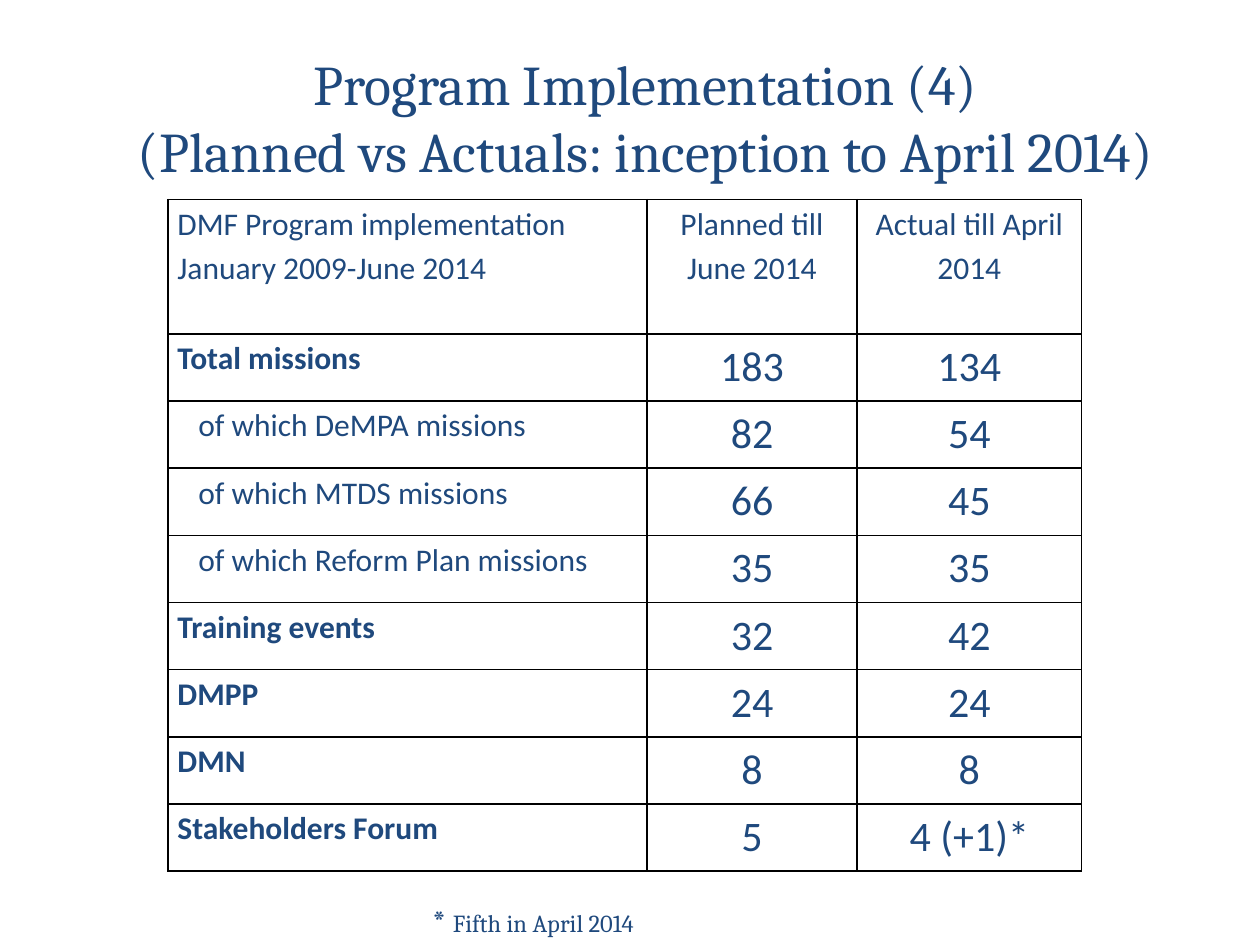
from lxml import etree
from pptx import Presentation
from pptx.dml.color import RGBColor
from pptx.enum.text import MSO_ANCHOR, PP_ALIGN
from pptx.oxml.ns import qn
from pptx.util import Pt

CENTER, LEFT = PP_ALIGN.CENTER, PP_ALIGN.LEFT
MIDDLE, TOP = MSO_ANCHOR.MIDDLE, MSO_ANCHOR.TOP

TITLE = "Program Implementation (4)\v(Planned vs Actuals: inception to April 2014)"
HEADER = ("DMF Program implementation January 2009-June 2014",
          "Planned till June 2014", "Actual till April 2014")
# label, planned, actual, is a sub-item of the row above
ROWS = [
    ("Total missions", "183", "134", False),
    ("of which DeMPA missions", "82", "54", True),
    ("of which MTDS missions", "66", "45", True),
    ("of which Reform Plan missions", "35", "35", True),
    ("Training events", "32", "42", False),
    ("DMPP", "24", "24", False),
    ("DMN", "8", "8", False),
    ("Stakeholders Forum", "5", "4 (+1)*", False),
]
FOOTNOTE_MARK, FOOTNOTE = "* ", "Fifth in April 2014"

THEME = {
    "ink": RGBColor(0x1F, 0x49, 0x7D), "border": "000000",
    "heading_font": "Cambria", "body_font": "Calibri",
    "title": 32, "figure": 24, "label": 18, "note": 14,
}
COLUMN_WIDTHS = (273.6, 120.24, 128.16)
HEADER_HEIGHT, ROW_HEIGHT = 76.8, 38.4
CELL_INSET, SUB_INDENT = 5.4, 12


def set_font(font, name, size, bold=False):
    font.name, font.size, font.bold = name, Pt(size), bold
    font.color.rgb = THEME["ink"]


def add_text_box(page, left, top, width, height, anchor):
    box = page.shapes.add_textbox(Pt(left), Pt(top), Pt(width), Pt(height))
    box.text_frame.word_wrap = True
    box.text_frame.vertical_anchor = anchor
    return box.text_frame.paragraphs[0]


def add_borders(cell):
    properties = cell._tc.get_or_add_tcPr()
    for position, side in enumerate(("a:lnL", "a:lnR", "a:lnT", "a:lnB")):
        line = etree.Element(qn(side), w=str(Pt(1)))
        fill = etree.SubElement(line, qn("a:solidFill"))
        etree.SubElement(fill, qn("a:srgbClr"), val=THEME["border"])
        properties.insert(position, line)


def fill_cell(cell, text, size, align, bold=False, indent=0):
    cell.margin_left, cell.margin_right = Pt(CELL_INSET + indent), Pt(CELL_INSET)
    cell.margin_top = cell.margin_bottom = Pt(0)
    cell.fill.background()
    para = cell.text_frame.paragraphs[0]
    para.text = text
    para.alignment = align
    para.line_spacing = 1.15
    set_font(para.font, THEME["body_font"], size, bold)
    add_borders(cell)


def add_program_table(page):
    height = HEADER_HEIGHT + ROW_HEIGHT * len(ROWS)
    table = page.shapes.add_table(
        len(ROWS) + 1, len(HEADER), Pt(96), Pt(114),
        Pt(sum(COLUMN_WIDTHS)), Pt(height)).table
    table.first_row = table.horz_banding = False
    for column, width in zip(table.columns, COLUMN_WIDTHS):
        column.width = Pt(width)
    for index, row in enumerate(table.rows):
        row.height = Pt(ROW_HEIGHT if index else HEADER_HEIGHT)

    for index, text in enumerate(HEADER):
        fill_cell(table.cell(0, index), text, THEME["label"],
                  CENTER if index else LEFT)
    for index, (label, planned, actual, is_sub) in enumerate(ROWS, 1):
        fill_cell(table.cell(index, 0), label, THEME["label"], LEFT,
                  bold=not is_sub, indent=SUB_INDENT if is_sub else 0)
        for column, figure in enumerate((planned, actual), 1):
            fill_cell(table.cell(index, column), figure, THEME["figure"], CENTER)


def main():
    deck = Presentation()
    deck.slide_width, deck.slide_height = Pt(720), Pt(540)
    page = deck.slides.add_slide(deck.slide_layouts[6])

    title = add_text_box(page, 36, 21.6, 666, 90, MIDDLE)
    title.text = TITLE
    title.alignment = CENTER
    set_font(title.font, THEME["heading_font"], THEME["title"])

    add_program_table(page)

    note = add_text_box(page, 240, 511.2, 276, 28.8, TOP)
    for text, size in ((FOOTNOTE_MARK, "label"), (FOOTNOTE, "note")):
        span = note.add_run()
        span.text = text
        set_font(span.font, THEME["heading_font"], THEME[size])

    deck.save("out.pptx")


if __name__ == "__main__":
    main()
